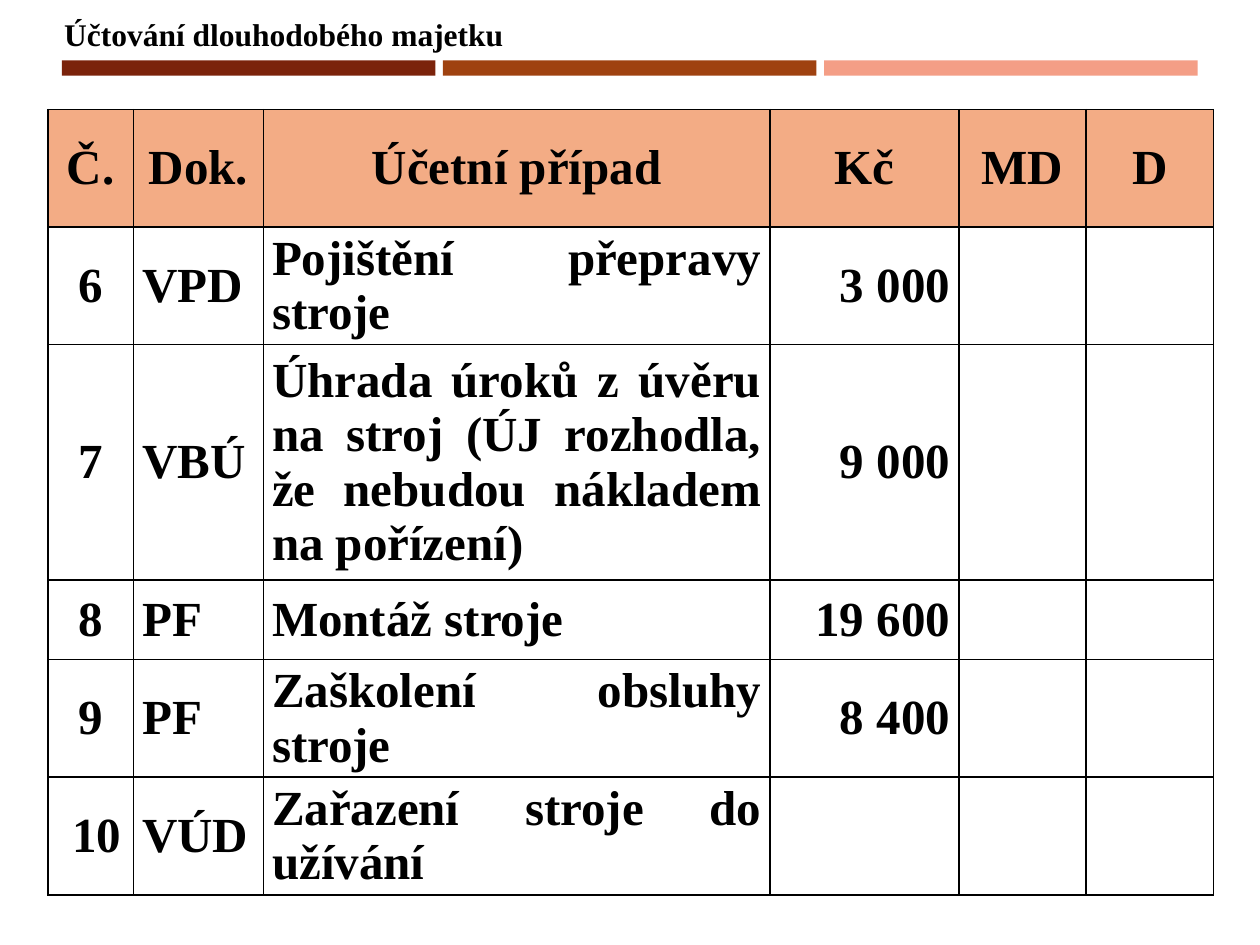
from dataclasses import dataclass

from lxml import etree
from pptx import Presentation
from pptx.dml.color import RGBColor
from pptx.enum.shapes import MSO_SHAPE
from pptx.enum.text import MSO_ANCHOR, MSO_AUTO_SIZE, PP_ALIGN
from pptx.oxml.ns import qn
from pptx.util import Inches, Pt

RECTANGLE = MSO_SHAPE.RECTANGLE
MIDDLE = MSO_ANCHOR.MIDDLE
FIT_TEXT = MSO_AUTO_SIZE.SHAPE_TO_FIT_TEXT
LEFT, CENTER = PP_ALIGN.LEFT, PP_ALIGN.CENTER
RIGHT, JUSTIFY = PP_ALIGN.RIGHT, PP_ALIGN.JUSTIFY
TITLE_ONLY = 5
GRID_COLUMNS, GRID_ROWS = 100, 75


@dataclass(frozen=True)
class Theme:
    """Colours, font and sizes of the deck."""
    font: str = "Times New Roman"
    ink: str = "000000"
    header: str = "F3AC85"
    stripes: tuple = ("7B230B", "9F4210", "F49E86")
    title_size: int = 18
    table_size: int = 28
    border: int = 1


class Deck:
    """Holds the theme and the current slide, and places elements on its grid."""

    def __init__(self, theme):
        """Start a presentation with one title slide."""
        self.theme = theme
        self.presentation = Presentation()
        self.presentation.slide_width = Inches(10)
        self.presentation.slide_height = Inches(7.5)
        self.slide = self.presentation.slides.add_slide(
            self.presentation.slide_layouts[TITLE_ONLY])

    def x(self, columns):
        """Turn grid columns into a length."""
        return round(self.presentation.slide_width * columns / GRID_COLUMNS)

    def y(self, rows):
        """Turn grid rows into a length."""
        return round(self.presentation.slide_height * rows / GRID_ROWS)

    def box(self, left, top, width, height):
        """Turn a grid area into a position and a size."""
        return self.x(left), self.y(top), self.x(width), self.y(height)

    def set_words(self, frame, words, size, alignment):
        """Put one bold paragraph into a text frame."""
        frame.text = words
        paragraph = frame.paragraphs[0]
        paragraph.alignment = alignment
        for run in paragraph.runs:
            run.font.name = self.theme.font
            run.font.size = Pt(size)
            run.font.bold = True
            run.font.color.rgb = RGBColor.from_string(self.theme.ink)

    def title(self, words, area):
        """Move and fill the title placeholder."""
        heading = self.slide.shapes.title
        heading.left, heading.top, heading.width, heading.height = self.box(*area)
        frame = heading.text_frame
        self.set_words(frame, words, self.theme.title_size, LEFT)
        frame.word_wrap = False
        frame.auto_size = FIT_TEXT

    def stripes(self, left, top, width, height, gap):
        """Draw a row of equal bars, one for each stripe colour."""
        for index, colour in enumerate(self.theme.stripes):
            bar = self.slide.shapes.add_shape(
                RECTANGLE, *self.box(left + index * (width + gap), top, width, height))
            bar.shadow.inherit = False
            bar.fill.solid()
            bar.fill.fore_color.rgb = RGBColor.from_string(colour)
            bar.line.fill.background()

    def outline(self, cell):
        """Give a cell a border on all four sides."""
        properties = cell._tc.get_or_add_tcPr()
        for index, side in enumerate(("a:lnL", "a:lnR", "a:lnT", "a:lnB")):
            line = etree.Element(qn(side), w=str(Pt(self.theme.border)))
            fill = etree.SubElement(line, qn("a:solidFill"))
            etree.SubElement(fill, qn("a:srgbClr"), val=self.theme.ink)
            properties.insert(index, line)

    def table(self, left, top, widths, heights, records, alignments):
        """Draw a bordered table with a coloured, centred header row."""
        area = self.box(left, top, sum(widths), sum(heights))
        grid = self.slide.shapes.add_table(len(heights), len(widths), *area).table
        grid.horz_banding = False
        for column, width in zip(grid.columns, widths):
            column.width = self.x(width)
        for row, height in zip(grid.rows, heights):
            row.height = self.y(height)
        for r, record in enumerate(records):
            for c, words in enumerate(record):
                cell = grid.cell(r, c)
                cell.margin_left = cell.margin_right = self.x(0.7)
                cell.margin_top = cell.margin_bottom = 0
                cell.vertical_anchor = MIDDLE
                self.outline(cell)
                if r == 0:
                    cell.fill.solid()
                    cell.fill.fore_color.rgb = RGBColor.from_string(self.theme.header)
                else:
                    cell.fill.background()
                self.set_words(cell.text_frame, words, self.theme.table_size,
                               alignments[c] if r else CENTER)


def main():
    """Build the slide on booking fixed assets."""
    entries = [
        ("Č.", "Dok.", "Účetní případ", "Kč", "MD", "D"),
        ("6", "VPD", "Pojištění přepravy stroje", "3 000", "", ""),
        ("7", "VBÚ", "Úhrada úroků z úvěru na stroj (ÚJ rozhodla, "
         "že nebudou nákladem na pořízení)", "9 000", "", ""),
        ("8", "PF", "Montáž stroje", "19 600", "", ""),
        ("9", "PF", "Zaškolení obsluhy stroje", "8 400", "", ""),
        (" 10", "VÚD", "Zařazení stroje do užívání", "", "", ""),
    ]
    deck = Deck(Theme())
    deck.stripes(4.9, 4.8, 29.65, 1.2, 0.6)
    deck.title("Účtování dlouhodobého majetku", (4.1, 0.7, 37.2, 4))
    deck.table(3.8, 8.7, (6.8, 10.3, 40.2, 15, 10.1, 10.1),
               (9.3, 9.3, 18.7, 6.3, 9.3, 9.3), entries,
               (CENTER, LEFT, JUSTIFY, RIGHT, CENTER, CENTER))
    deck.presentation.save("out.pptx")


if __name__ == "__main__":
    main()
